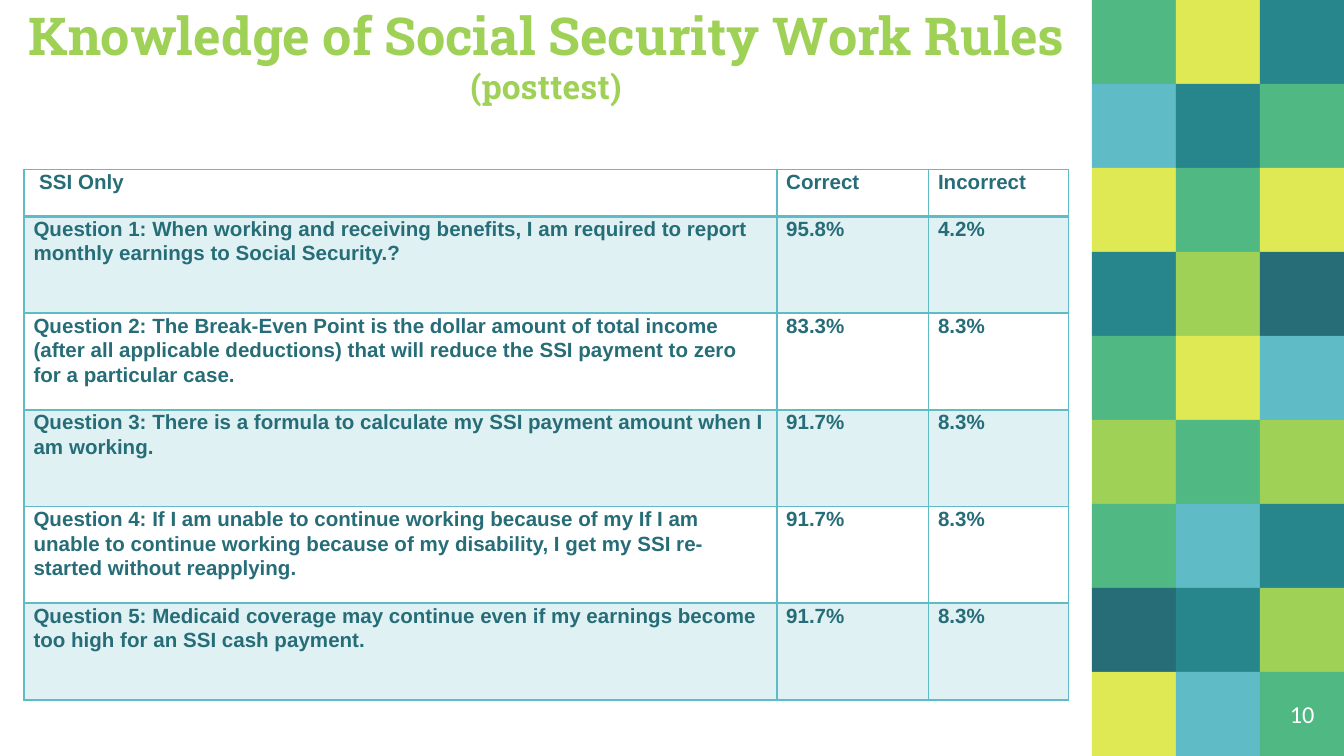
from dataclasses import dataclass

from pptx import Presentation, util as u
from pptx.dml.color import RGBColor
from pptx.enum import shapes, text
from pptx.oxml.ns import qn
from lxml import etree


@dataclass(frozen=True)
class Theme:
    lime: str = "9ED155"
    yellow: str = "DFE954"
    green: str = "50B883"
    teal: str = "27868B"
    dark: str = "266D78"
    blue: str = "5FBBC5"
    white: str = "FFFFFF"
    title_font: str = "Roboto Slab"
    body_font: str = "Arial"
    number_font: str = "Calibri"
    title_size: int = 28
    subtitle_size: int = 18
    body_size: int = 11
    number_size: int = 13


T = Theme()

TITLE, SUBTITLE = "Knowledge of Social Security Work Rules", "(posttest)"
PAGE = "10"
ROWS = [
    ("\N{NO-BREAK SPACE}SSI Only", "Correct", "Incorrect"),
    ("Question 1: When working and receiving benefits, I am required to report "
     "monthly earnings to Social Security.?", "95.8%", "4.2%"),
    ("Question 2: The Break-Even Point is the dollar amount of total income "
     "(after all applicable deductions) that will reduce the SSI payment to zero "
     "for a particular case.", "83.3%", "8.3%"),
    ("Question 3: There is a formula to calculate my SSI payment amount when I "
     "am working.", "91.7%", "8.3%"),
    ("Question 4: If I am unable to continue working because of my If I am "
     "unable to continue working because of my disability, I get my SSI "
     "re-started without reapplying.", "91.7%", "8.3%"),
    ("Question 5: Medicaid coverage may continue even if my earnings become "
     "too high for an SSI cash payment.", "91.7%", "8.3%"),
]
COL_WIDTHS = (5.6, 1.13, 1.04)
HEADER_HEIGHT, ROW_HEIGHT = 0.35, 0.72

# One letter per tile, one word per row of the side mosaic
MOSAIC = "GYT BTG YGY TLD GYB LGL GBT DTL YBG".split()
TILE_COLORS = {"G": T.green, "Y": T.yellow, "T": T.teal,
               "B": T.blue, "L": T.lime, "D": T.dark}

WIDTH = 10
TILE = WIDTH / 16
HEIGHT = TILE * len(MOSAIC)
MOSAIC_LEFT = WIDTH - 3 * TILE


def box(*lengths):
    return [u.Inches(n) for n in lengths]


def add_run(p, words, *, size, color, font, bold=False):
    r = p.add_run()
    r.text = words
    r.font.size, r.font.name, r.font.bold = u.Pt(size), font, bold
    r.font.color.rgb = RGBColor.from_string(color)


def set_frame(tf, anchor):
    tf.word_wrap = True
    tf.auto_size = text.MSO_AUTO_SIZE.NONE
    tf.vertical_anchor = anchor
    tf.margin_left = tf.margin_right = tf.margin_top = tf.margin_bottom = u.Inches(0.1)
    p = tf.paragraphs[0]
    p.alignment = text.PP_ALIGN.CENTER
    return p


def add_title(s):
    sp = s.shapes.title
    sp.left, sp.top, sp.width, sp.height = box(0, 0.15, MOSAIC_LEFT, 0.74)
    p = set_frame(sp.text_frame, text.MSO_ANCHOR.BOTTOM)
    look = dict(color=T.lime, font=T.title_font, bold=True)
    add_run(p, TITLE, size=T.title_size, **look)
    p.add_line_break()
    add_run(p, SUBTITLE, size=T.subtitle_size, **look)


def add_mosaic(s):
    for row, letters in enumerate(MOSAIC):
        for col, letter in enumerate(letters):
            sp = s.shapes.add_shape(
                shapes.MSO_SHAPE.RECTANGLE,
                *box(MOSAIC_LEFT + col * TILE, row * TILE, TILE, TILE))
            sp.shadow.inherit = False
            sp.fill.solid()
            sp.fill.fore_color.rgb = RGBColor.from_string(TILE_COLORS[letter])
            sp.line.fill.background()


def add_page_number(s):
    sp = s.shapes.add_textbox(*box(WIDTH - TILE, HEIGHT - TILE, TILE, TILE))
    p = set_frame(sp.text_frame, text.MSO_ANCHOR.MIDDLE)
    add_run(p, PAGE, size=T.number_size, color=T.white, font=T.number_font)


def set_borders(cell, **widths):
    """Draw the cell's borders; widths maps L, R, T, B to points."""
    pr = cell._tc.get_or_add_tcPr()
    for i, (side, width) in enumerate(widths.items()):
        ln = etree.Element(qn(f"a:ln{side}"), w=str(u.Pt(width)))
        fill = etree.SubElement(ln, qn("a:solidFill"))
        etree.SubElement(fill, qn("a:srgbClr"), val=T.blue)
        pr.insert(i, ln)


def fill_cell(cell, shaded):
    if not shaded:
        cell.fill.background()
        return
    cell.fill.solid()
    cell.fill.fore_color.rgb = RGBColor.from_string(T.blue)
    color = cell._tc.tcPr.find(".//" + qn("a:srgbClr"))
    etree.SubElement(color, qn("a:alpha"), val="20000")


def add_results(s):
    heights = [HEADER_HEIGHT] + [ROW_HEIGHT] * (len(ROWS) - 1)
    table = s.shapes.add_table(
        len(ROWS), len(COL_WIDTHS),
        *box(0.18, 1.26, sum(COL_WIDTHS), sum(heights))).table
    for col, width in zip(table.columns, COL_WIDTHS):
        col.width = u.Inches(width)
    for i, (values, height) in enumerate(zip(ROWS, heights)):
        table.rows[i].height = u.Inches(height)
        for j, value in enumerate(values):
            cell = table.cell(i, j)
            cell.margin_left = cell.margin_right = u.Inches(0.07)
            cell.margin_top = cell.margin_bottom = 0
            p = cell.text_frame.paragraphs[0]
            p.line_spacing = 1.07
            add_run(p, value, size=T.body_size, color=T.dark,
                    font=T.body_font, bold=True)
            fill_cell(cell, shaded=i % 2 == 1)
            set_borders(cell, L=1, R=1, T=2 if i == 1 else 1, B=2 if i == 0 else 1)


def main():
    prs = Presentation()
    prs.slide_width, prs.slide_height = box(WIDTH, HEIGHT)
    s = prs.slides.add_slide(prs.slide_layouts[5])
    add_mosaic(s)
    add_title(s)
    add_page_number(s)
    add_results(s)
    prs.save("out.pptx")


if __name__ == "__main__":
    main()
